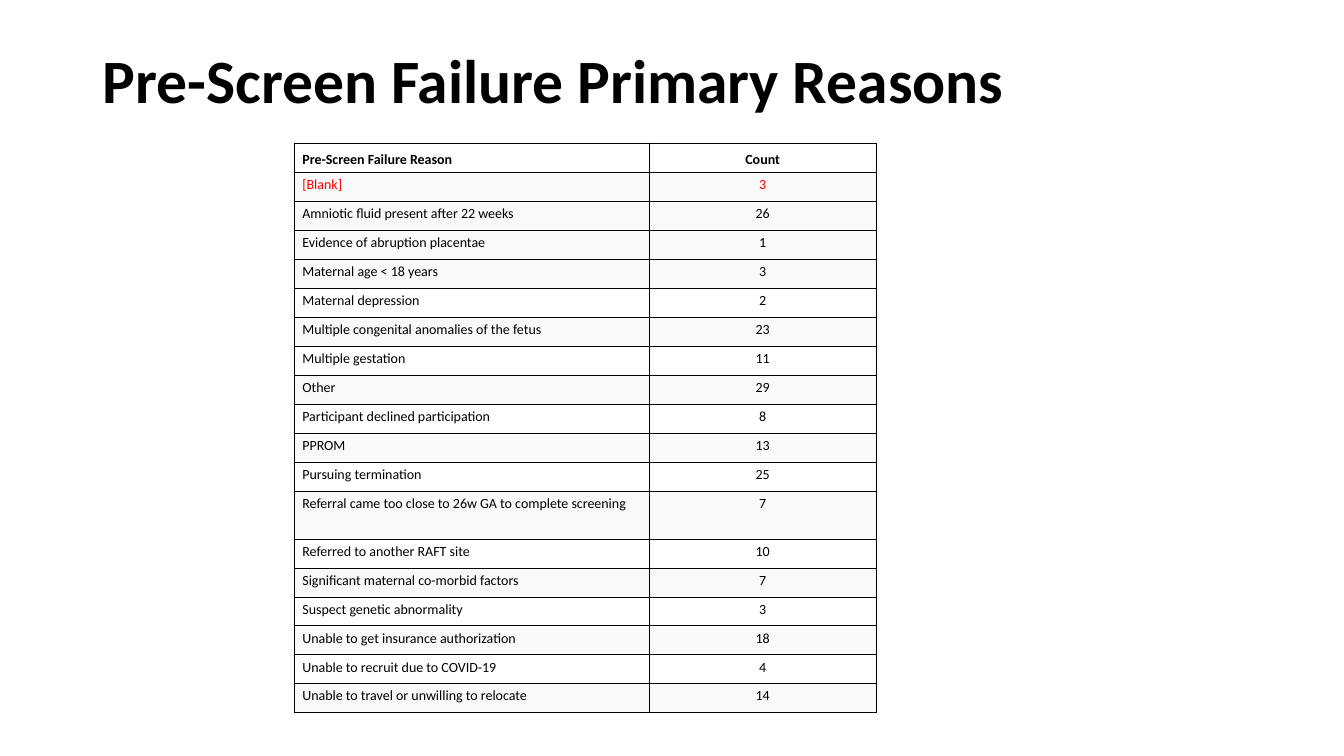
import pptx
import pptx.util
import pptx.dml.color
import pptx.enum.text
import pptx.oxml.ns
from lxml import etree
from pptx.util import Cm, Pt

BLACK = pptx.dml.color.RGBColor(0x00, 0x00, 0x00)
RED = pptx.dml.color.RGBColor(0xFF, 0x00, 0x00)
WHITE = pptx.dml.color.RGBColor(0xFF, 0xFF, 0xFF)
LIGHT_GREY = pptx.dml.color.RGBColor(0xF9, 0xF9, 0xF9)
FONT = "Calibri"

HEADER = ("Pre-Screen Failure Reason", "Count")
BLANK_REASON = "[Blank]"
LONG_REASON = "Referral came too close to 26w GA to complete screening"
REASONS = [
    (BLANK_REASON, 3),
    ("Amniotic fluid present after 22 weeks", 26),
    ("Evidence of abruption placentae", 1),
    ("Maternal age < 18 years", 3),
    ("Maternal depression", 2),
    ("Multiple congenital anomalies of the fetus", 23),
    ("Multiple gestation", 11),
    ("Other", 29),
    ("Participant declined participation", 8),
    ("PPROM", 13),
    ("Pursuing termination", 25),
    (LONG_REASON, 7),
    ("Referred to another RAFT site", 10),
    ("Significant maternal co-morbid factors", 7),
    ("Suspect genetic abnormality", 3),
    ("Unable to get insurance authorization", 18),
    ("Unable to recruit due to COVID-19", 4),
    ("Unable to travel or unwilling to relocate", 14),
]
COLUMN_WIDTHS = (Cm(8.94), Cm(5.72))
ROW_HEIGHT, LONG_ROW_HEIGHT = Cm(0.73), Cm(1.21)


def format_text(paragraph, size, color, bold):
    for run in paragraph.runs:
        run.font.name = FONT
        run.font.size = Pt(size)
        run.font.bold = bold
        run.font.color.rgb = color


def add_title(slide, text):
    title = slide.shapes.title
    title.left, title.top = Cm(2.33), Cm(0.81)
    title.width, title.height = Cm(29.21), Cm(2.57)
    frame = title.text_frame
    frame.text = text
    frame.word_wrap = True
    frame.vertical_anchor = pptx.enum.text.MSO_ANCHOR.MIDDLE
    heading = frame.paragraphs[0]
    heading.alignment = pptx.enum.text.PP_ALIGN.LEFT
    heading.line_spacing = 0.9
    format_text(heading, 44, BLACK, True)


def set_borders(cell, widths):
    """Draw the left, right, top and bottom borders, widths in points."""
    qn = pptx.oxml.ns.qn
    properties = cell._tc.get_or_add_tcPr()
    for position, (side, width) in enumerate(zip("LRTB", widths)):
        border = etree.Element(qn(f"a:ln{side}"), w=str(Pt(width)))
        fill = etree.SubElement(border, qn("a:solidFill"))
        etree.SubElement(fill, qn("a:srgbClr"), val=str(BLACK))
        properties.insert(position, border)


def fill_cell(cell, text, color, background, is_header, centred):
    cell.text_frame.text = text
    cell.margin_left = cell.margin_right = Cm(0.2)
    cell.margin_top = cell.margin_bottom = Cm(0.1)
    anchors = pptx.enum.text.MSO_ANCHOR
    cell.vertical_anchor = anchors.BOTTOM if is_header else anchors.TOP
    cell.fill.solid()
    cell.fill.fore_color.rgb = background
    paragraph = cell.text_frame.paragraphs[0]
    alignments = pptx.enum.text.PP_ALIGN
    paragraph.alignment = alignments.CENTER if centred else alignments.LEFT
    format_text(paragraph, 10, color, is_header)


def add_reason_table(slide):
    rows = [HEADER] + REASONS
    heights = [LONG_ROW_HEIGHT if reason == LONG_REASON else ROW_HEIGHT
               for reason, _ in rows]
    table = slide.shapes.add_table(
        len(rows), len(HEADER), Cm(7.42), Cm(3.61),
        sum(COLUMN_WIDTHS), sum(heights)).table
    table.horz_banding = False
    for column, width in zip(table.columns, COLUMN_WIDTHS):
        column.width = width

    last = len(rows) - 1
    for index, row in enumerate(rows):
        table.rows[index].height = heights[index]
        # The first four reasons are shaded, then every second one
        shaded = 1 <= index <= 4 or (index > 4 and index % 2 == 0)
        background = LIGHT_GREY if shaded else WHITE
        color = RED if row[0] == BLANK_REASON else BLACK
        # Outer edges are heavier than the lines between rows
        widths = (1, 1, 1 if index == 0 else 0.6, 1 if index == last else 0.6)
        for column, value in enumerate(row):
            cell = table.cell(index, column)
            fill_cell(cell, str(value), color, background,
                      index == 0, column == 1)
            set_borders(cell, widths)


def main():
    deck = pptx.Presentation()
    deck.slide_width, deck.slide_height = Cm(33.87), Cm(19.05)
    slide = deck.slides.add_slide(deck.slide_layouts[5])
    add_title(slide, "Pre-Screen Failure Primary Reasons")
    add_reason_table(slide)
    deck.save("out.pptx")


if __name__ == "__main__":
    main()
